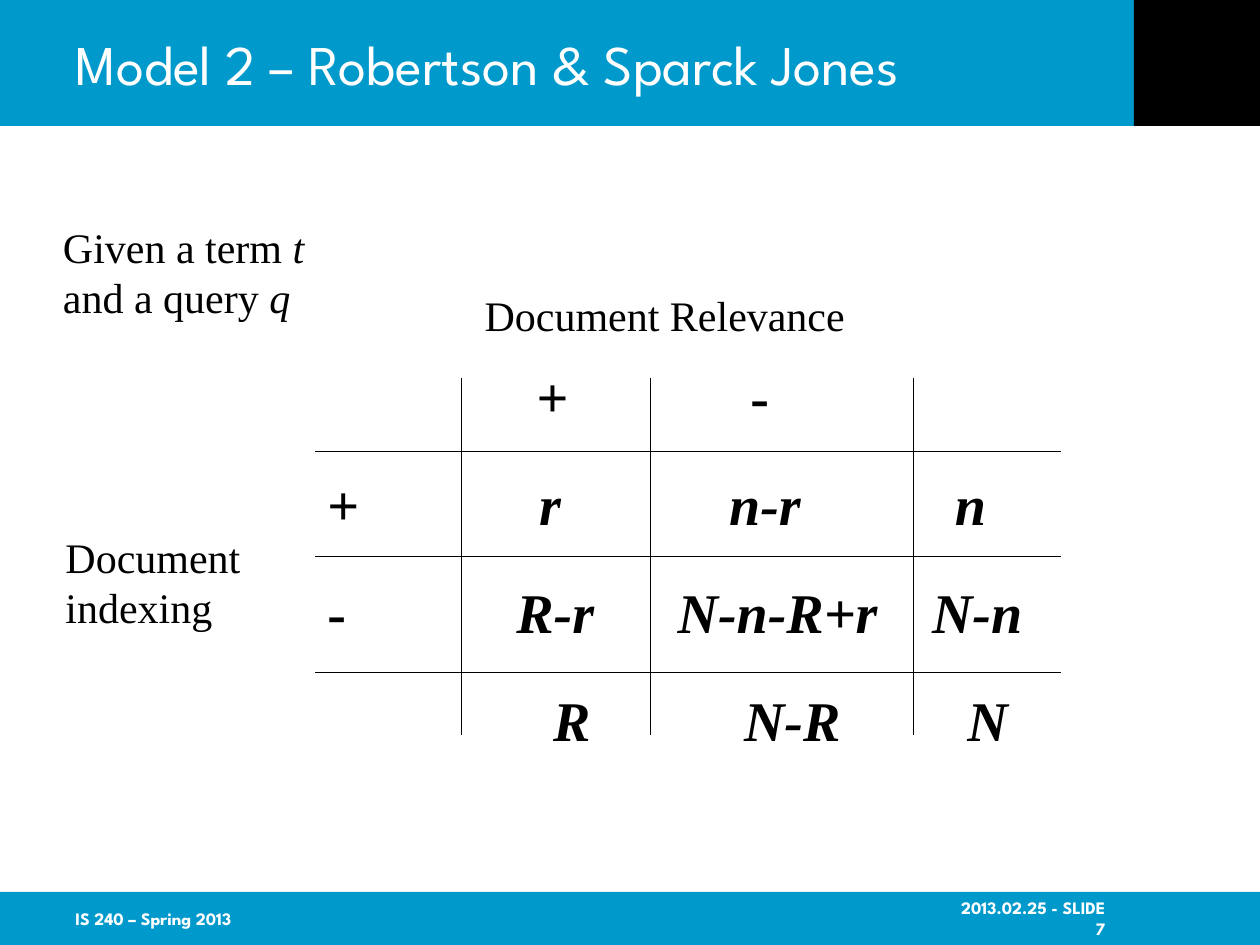
import pptx
import pptx.util
import pptx.dml.color
import pptx.enum.shapes
import pptx.enum.text
import pptx.oxml.ns
import lxml.etree

Cm = pptx.util.Cm
Pt = pptx.util.Pt
Align = pptx.enum.text.PP_ALIGN
Anchor = pptx.enum.text.MSO_ANCHOR

COLOURS = {"bar": "0099CC", "corner": "000000", "text": "000000", "light": "FFFFFF", "rule": "000000"}
SANS = "League Spartan"
SERIF = "Times New Roman"


def colour(name):
    return pptx.dml.color.RGBColor.from_string(COLOURS[name])


def add_tab_stops(paragraph, stops):
    properties = paragraph._p.get_or_add_pPr()
    tab_list = lxml.etree.SubElement(properties, pptx.oxml.ns.qn("a:tabLst"))
    for stop in stops:
        tab = lxml.etree.SubElement(tab_list, pptx.oxml.ns.qn("a:tab"))
        tab.set("pos", str(Cm(stop)))
        tab.set("algn", "l")


def write_text(shape, paragraphs, size=24, font=SERIF, fill="text", bold=False, align=Align.LEFT,
               anchor=Anchor.TOP, line_spacing=None, gap=0, right_inset=0.25, tabs=()):
    frame = shape.text_frame
    frame.word_wrap = True
    frame.auto_size = pptx.enum.text.MSO_AUTO_SIZE.NONE
    frame.vertical_anchor = anchor
    frame.margin_right = Cm(right_inset)
    for index, runs in enumerate(paragraphs):
        paragraph = frame.paragraphs[0] if index == 0 else frame.add_paragraph()
        if tabs:
            add_tab_stops(paragraph, tabs[index])
        paragraph.alignment = align
        if line_spacing:
            paragraph.line_spacing = line_spacing
        if index and gap:
            paragraph.space_before = Pt(gap)
        for text, italic in runs:
            run = paragraph.add_run()
            run.text = text
            run.font.name = font
            run.font.size = Pt(size)
            run.font.bold = bold
            run.font.italic = italic
            run.font.color.rgb = colour(fill)


def add_text(slide, left, top, width, height, paragraphs, **options):
    box = slide.shapes.add_textbox(Cm(left), Cm(top), Cm(width), Cm(height))
    write_text(box, paragraphs, **options)


def add_block(slide, left, top, width, height, fill):
    block = slide.shapes.add_shape(
        pptx.enum.shapes.MSO_SHAPE.RECTANGLE, Cm(left), Cm(top), Cm(width), Cm(height))
    block.shadow.inherit = False
    block.fill.solid()
    block.fill.fore_color.rgb = colour(fill)
    block.line.fill.background()


def add_rule(slide, start_x, start_y, end_x, end_y):
    rule = slide.shapes.add_connector(
        pptx.enum.shapes.MSO_CONNECTOR.STRAIGHT, Cm(start_x), Cm(start_y), Cm(end_x), Cm(end_y))
    rule.line.color.rgb = colour("rule")
    rule.line.width = Pt(0.75)
    lxml.etree.SubElement(rule._element.spPr, pptx.oxml.ns.qn("a:effectLst"))


def build_header(slide, left, top, width, height):
    add_block(slide, left, top, width, height, "bar")
    add_block(slide, left + width - height, top, height, height, "corner")
    title = slide.shapes.title
    title.element.getparent().append(title.element)
    title.left, title.top = Cm(left + 1.27), Cm(top)
    title.width, title.height = Cm(width - height - 1.27), Cm(height)
    write_text(title, [[("Model 2 – Robertson & Sparck Jones", False)]],
               size=32, font=SANS, fill="light", anchor=Anchor.MIDDLE)


def build_footer(slide, left, top, width, height):
    add_block(slide, left, top, width, height, "bar")
    label = {"size": 10, "font": SANS, "fill": "light", "bold": True}
    add_text(slide, left + 1.27, top, 5.28, height, [[("IS 240 – Spring 2013", False)]],
             anchor=Anchor.MIDDLE, **label)
    add_text(slide, left + width - 6.55, top, 5.28, height, [[("2013.02.25 - SLIDE 7", False)]],
             anchor=Anchor.BOTTOM, align=Align.RIGHT, right_inset=1.85, **label)


def build_labels(slide, left, top):
    add_text(slide, left, top, 5.6, 2.29,
             [[("Given a term ", False), ("t", True)], [("and a query ", False), ("q", True)]])
    add_text(slide, left + 8.5, top + 1.37, 8, 1.27, [[("Document Relevance", False)]])
    add_text(slide, left + 0.05, top + 6.25, 4.2, 2.29, [[("Document", False)], [("indexing", False)]])


def build_contingency_grid(slide, left, top, width, height):
    rows = [
        ("", ["+", "-"], False, [4.22, 8.53]),
        ("+", ["r", "n-r", "n"], True, [4.27, 8.1, 12.65]),
        ("-", ["R-r", "N-n-R+r", "N-n"], True, [3.81, 7.06, 12.19]),
        ("", ["R", "N-R", "N"], True, [4.55, 8.4, 12.9]),
    ]
    paragraphs = []
    for heading, cells, italic, stops in rows:
        runs = [(heading, False)] if heading else []
        paragraphs.append(runs + [("\t" + "\t".join(cells), italic)])
    add_text(slide, left, top - 0.2, width, height + 0.65, paragraphs, size=32, bold=True,
             line_spacing=0.8, gap=31, tabs=[row[3] for row in rows])
    for offset in (1.48, 3.6, 5.93):
        add_rule(slide, left, top + offset, left + width, top + offset)
    for offset in (2.96, 6.77, 12.07):
        add_rule(slide, left + offset, top, left + offset, top + height)


def main():
    presentation = pptx.Presentation()
    presentation.slide_width = Cm(25.4)
    presentation.slide_height = Cm(19.05)
    slide = presentation.slides.add_slide(presentation.slide_layouts[5])
    build_header(slide, 0, 0, 25.4, 2.54)
    build_footer(slide, 0, 17.98, 25.4, 1.07)
    build_labels(slide, 1.02, 4.34)
    build_contingency_grid(slide, 6.35, 7.62, 15.03, 7.2)
    presentation.save("out.pptx")


if __name__ == "__main__":
    main()
